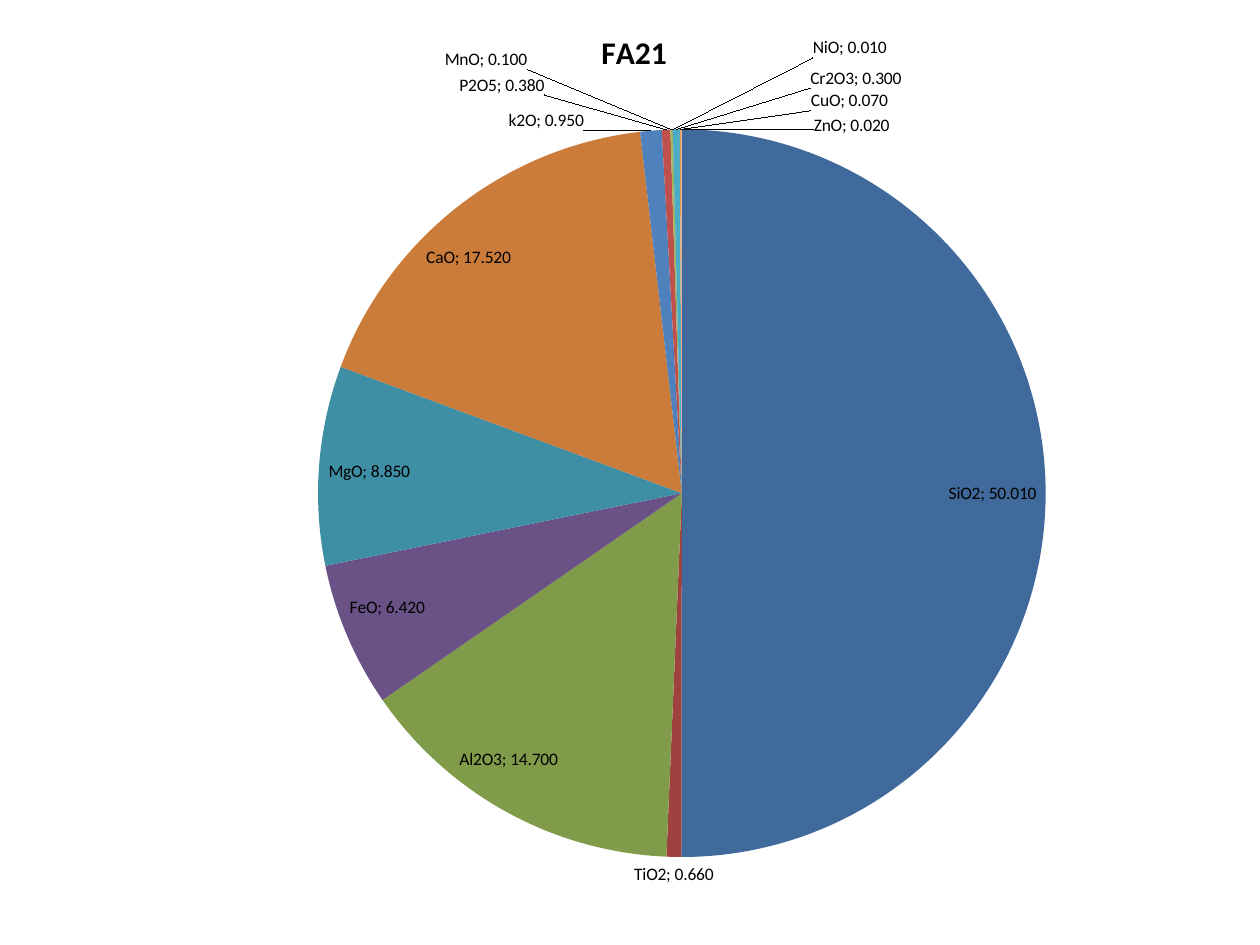
from lxml import etree
from pptx import Presentation
from pptx import util as u
from pptx.chart import data
from pptx.dml import color
from pptx.enum import chart as ch
from pptx.oxml import ns

OXIDES = {
    "SiO2": 50.01, "TiO2": 0.66, "Al2O3": 14.7, "FeO": 6.42, "MgO": 8.85,
    "CaO": 17.52, "k2O": 0.95, "P2O5": 0.38, "MnO": 0.1, "NiO": 0.01,
    "Cr2O3": 0.3, "CuO": 0.07, "CoO": 0, "ZnO": 0.02,
}
# Shift of the crowded labels, in percent of the chart's width and height
LABEL_SHIFTS = {
    "k2O": (-8.7, 0.8), "P2O5": (-13.7, -2.9), "MnO": (-15.5, -5.6),
    "NiO": (14.8, -6.8), "Cr2O3": (15, -3.6), "CuO": (14.1, -1.2),
    "ZnO": (14.2, 1.4),
}
HIDDEN_LABEL = "CoO"
NUMBER_FORMAT = "#,##0.000"
LABEL_FONT = {"name": "Calibri", "size": u.Pt(10), "bold": False}
TITLE_FONT = {"name": "Calibri", "size": u.Pt(18), "bold": True}


def format_font(font, values, hex_color="000000"):
    for key, value in values.items():
        setattr(font, key, value)
    font.color.rgb = color.RGBColor.from_string(hex_color)


def element(tag, **attributes):
    node = etree.Element(ns.qn(tag))
    for key, value in attributes.items():
        node.set(key, str(value))
    return node


def manual_layout(**values):
    """Return a c:layout element; numbers are percent of the chart."""
    layout = element("c:layout")
    manual = etree.SubElement(layout, ns.qn("c:manualLayout"))
    for key, value in values.items():
        share = value if isinstance(value, str) else round(value / 100, 4)
        manual.append(element("c:" + key, val=share))
    return layout


def add_separator(labels):
    separator = element("c:separator")
    separator.text = "; "
    labels.find(ns.qn("c:showBubbleSize")).addnext(separator)


def format_label(series, position, oxide):
    """Shift or hide the label of one thin slice."""
    label = series.points[position].data_label
    label.position = ch.XL_LABEL_POSITION.OUTSIDE_END
    format_font(label.font, LABEL_FONT)
    node = next(n for n in series.data_labels._element.findall(ns.qn("c:dLbl"))
                if n.find(ns.qn("c:idx")).get("val") == str(position))
    index = node.find(ns.qn("c:idx"))
    if oxide == HIDDEN_LABEL:
        for child in list(node)[1:]:
            node.remove(child)
        index.addnext(element("c:delete", val=1))
        return
    x, y = LABEL_SHIFTS[oxide]
    index.addnext(element("c:numFmt", formatCode=NUMBER_FORMAT, sourceLinked=0))
    index.addnext(manual_layout(x=x, y=y))
    node.find(ns.qn("c:showCatName")).set("val", "1")
    add_separator(node)


def format_labels(series):
    labels = series.data_labels
    settings = {
        "number_format": NUMBER_FORMAT, "number_format_is_linked": False,
        "show_value": True, "show_category_name": True,
        "position": ch.XL_LABEL_POSITION.BEST_FIT,
    }
    for key, value in settings.items():
        setattr(labels, key, value)
    format_font(labels.font, LABEL_FONT)
    add_separator(labels._element)
    for position, oxide in enumerate(OXIDES):
        if oxide in LABEL_SHIFTS or oxide == HIDDEN_LABEL:
            format_label(series, position, oxide)


def format_title(chart, wording):
    frame = chart.chart_title.text_frame
    frame.text = wording
    format_font(frame.paragraphs[0].runs[0].font, TITLE_FONT)
    title = chart.chart_title._element
    for old in title.findall(ns.qn("c:layout")):
        title.remove(old)
    title.find(ns.qn("c:tx")).addnext(
        manual_layout(xMode="edge", yMode="edge", x=46.3, y=2.6))


def add_composition_pie(slide, box, sample):
    composition = data.CategoryChartData(number_format=NUMBER_FORMAT)
    composition.categories = list(OXIDES)
    composition.add_series(sample, list(OXIDES.values()))
    chart = slide.shapes.add_chart(ch.XL_CHART_TYPE.PIE, *box, composition).chart
    chart.has_legend = False
    format_font(chart.font, LABEL_FONT)
    format_title(chart, sample)

    # Slices take the theme's accent colours in turn
    pie = chart.plots[0]
    pie.vary_by_categories = True
    format_labels(pie.series[0])

    plot_area = chart._chartSpace.find(".//" + ns.qn("c:plotArea"))
    for old in plot_area.findall(ns.qn("c:layout")):
        plot_area.remove(old)
    plot_area.insert(0, manual_layout(
        layoutTarget="inner", xMode="edge", yMode="edge",
        x=8.8, y=13.7, w=89.4, h=77))


def main():
    deck = Presentation()
    deck.slide_width, deck.slide_height = u.Inches(10), u.Inches(7.5)
    slide = deck.slides.add_slide(deck.slide_layouts[6])
    box = (u.Inches(0.33), 0, u.Inches(9.5), deck.slide_height)
    add_composition_pie(slide, box, "FA21")
    deck.save("out.pptx")


if __name__ == "__main__":
    main()
